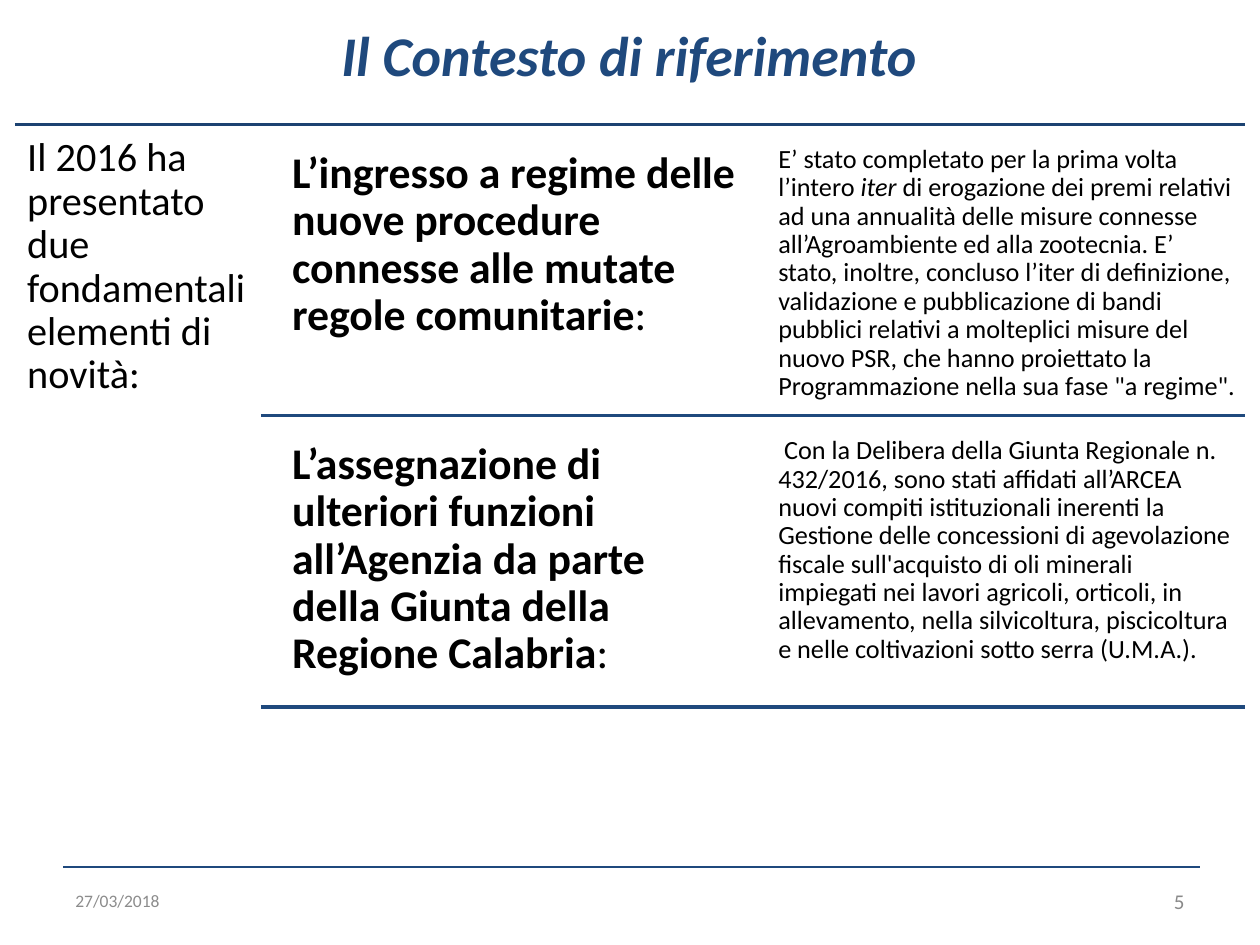
"""Build the slide on the reference context and its two new elements."""
from lxml import etree
from pptx import Presentation
from pptx.dml.color import RGBColor
from pptx.enum import shapes, text
from pptx.oxml import ns
from pptx.util import Cm, Pt

BLUE = RGBColor(0x1F, 0x49, 0x7D)
DARK_BLUE = RGBColor(0x1C, 0x42, 0x71)
BLACK = RGBColor(0, 0, 0)
DATE_GREY = RGBColor(0x8C, 0x8C, 0x8C)
NUMBER_GREY = RGBColor(0x89, 0x89, 0x89)

prs = Presentation()
prs.slide_width, prs.slide_height = Cm(25.4), Cm(19.05)
s = prs.slides.add_slide(prs.slide_layouts[6])


def add_line(x1, x2, y, color, width):
    ln = s.shapes.add_connector(
        shapes.MSO_CONNECTOR.STRAIGHT, Cm(x1), Cm(y), Cm(x2), Cm(y))
    ln.line.color.rgb = color
    ln.line.width = Pt(width)
    etree.SubElement(ln._element.spPr, ns.qn("a:effectLst"))


def add_text(box, parts, size, color=BLACK, inset=None):
    tf = s.shapes.add_textbox(*[Cm(v) for v in box]).text_frame
    tf.word_wrap = True
    p = tf.paragraphs[0]
    for words, bold, italic in parts:
        r = p.add_run()
        r.text = words
        r.font.name = "Calibri"
        r.font.size = Pt(size)
        r.font.color.rgb = color
        r.font.bold, r.font.italic = bold, italic
    if inset:
        tf.margin_left = tf.margin_right = Cm(inset)
        tf.margin_top = tf.margin_bottom = Cm(inset)
        p.line_spacing = 0.9
    return tf


add_line(1.27, 24.2, 17.48, BLUE, 1.5)

tf = add_text((0.25, 0.28, 24.87, 2.06),
              [("Il Contesto di riferimento", True, True)], 32, BLUE)
tf.paragraphs[0].alignment = text.PP_ALIGN.CENTER
tf.paragraphs[0].space_before = Pt(6.4)

footers = [
    (1.27, "27/03/2018", 10, DATE_GREY, text.PP_ALIGN.LEFT),
    (18.21, "5", 12, NUMBER_GREY, text.PP_ALIGN.RIGHT),
]
for x, words, size, color, align in footers:
    tf = add_text((x, 17.65, 5.92, 1.02), [(words, False, False)], size, color)
    tf.vertical_anchor = text.MSO_ANCHOR.MIDDLE
    tf.paragraphs[0].alignment = align

add_line(0.3, 25.1, 2.51, DARK_BLUE, 2)
add_text((0.3, 2.51, 4.95, 11.99),
         [("Il 2016 ha presentato due fondamentali elementi di novità:", False, False)],
         23, inset=0.25)

rows = [
    ("L’ingresso a regime delle nuove procedure connesse alle mutate regole comunitarie",
     [("E’ stato completato per la prima volta l’intero ", False, False),
      ("iter", False, True),
      (" di erogazione dei premi relativi ad una annualità delle misure connesse "
       "all’Agroambiente ed alla zootecnia. E’ stato, inoltre, concluso l’iter di "
       "definizione, validazione e pubblicazione di bandi pubblici relativi a "
       "molteplici misure del nuovo PSR, che hanno proiettato la Programmazione "
       "nella sua fase \"a regime\".", False, False)]),
    ("L’assegnazione di ulteriori funzioni all’Agenzia da parte della Giunta della "
     "Regione Calabria",
     [(" Con la Delibera della Giunta Regionale n. 432/2016, sono stati affidati "
       "all’ARCEA nuovi compiti istituzionali inerenti la Gestione delle concessioni "
       "di agevolazione fiscale sull'acquisto di oli minerali impiegati nei lavori "
       "agricoli, orticoli, in allevamento, nella silvicoltura, piscicoltura e nelle "
       "coltivazioni sotto serra (U.M.A.).", False, False)]),
]
for i, (heading, detail) in enumerate(rows):
    y = 2.79 + 5.87 * i
    add_text((5.64, y, 9.55, 5.59),
             [(heading, True, False), (":", False, False)], 25, inset=0.25)
    add_text((15.54, y, 9.55, 5.59), detail, 15, inset=0.15)
    add_line(5.26, 25.1, y + 5.59, BLUE, 2)

prs.save("out.pptx")
